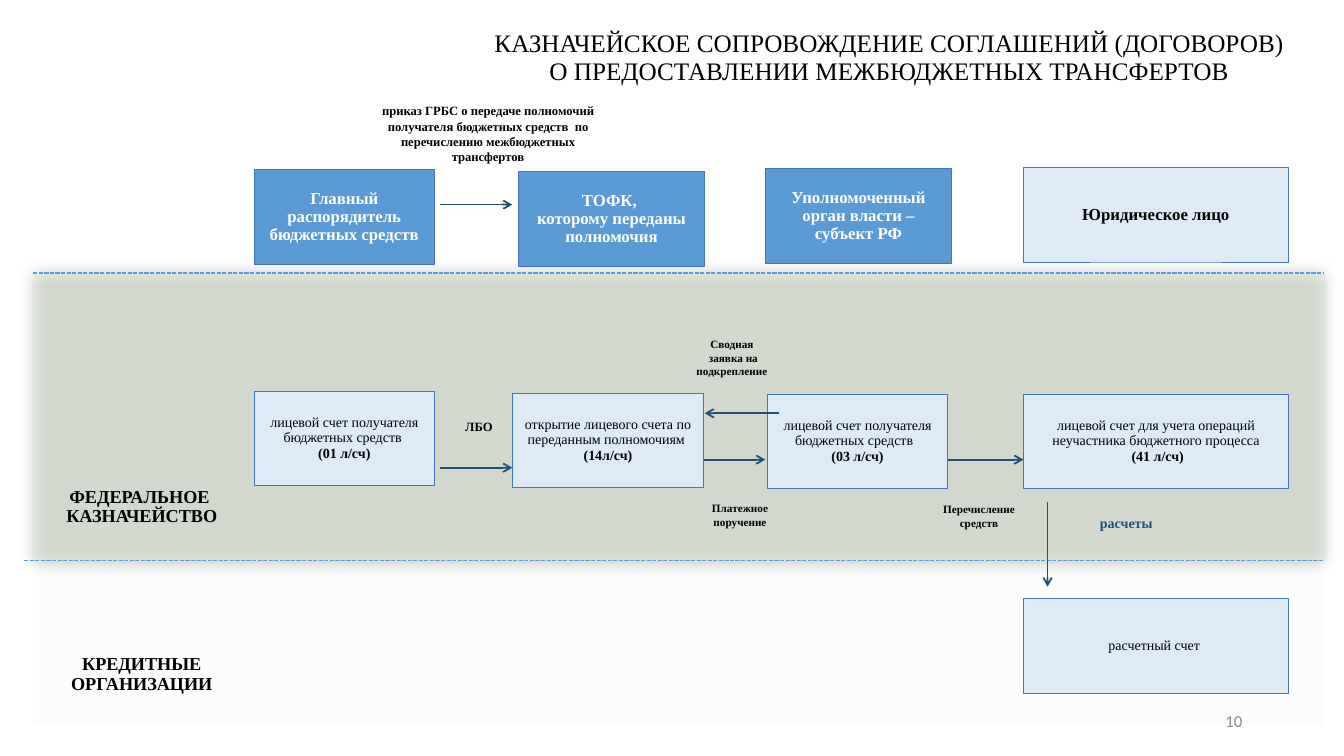
from lxml import etree
from pptx import Presentation
from pptx.dml.color import RGBColor
from pptx.enum.dml import MSO_LINE
from pptx.enum.shapes import MSO_CONNECTOR, MSO_SHAPE
from pptx.enum.text import MSO_ANCHOR, PP_ALIGN
from pptx.oxml.ns import qn
from pptx.util import Inches, Pt

RECTANGLE, STRAIGHT = MSO_SHAPE.RECTANGLE, MSO_CONNECTOR.STRAIGHT
CENTER, RIGHT = PP_ALIGN.CENTER, PP_ALIGN.RIGHT
TOP, MIDDLE = MSO_ANCHOR.TOP, MSO_ANCHOR.MIDDLE
DASH = MSO_LINE.SQUARE_DOT

BLACK = RGBColor(0x00, 0x00, 0x00)
WHITE = RGBColor(0xFF, 0xFF, 0xFF)
GRAY = RGBColor(0x8C, 0x8C, 0x8C)
BLUE = RGBColor(0x5B, 0x9B, 0xD5)
PALE_BLUE = RGBColor(0xDE, 0xEB, 0xF7)
BORDER = RGBColor(0x44, 0x72, 0xC4)
NAVY = RGBColor(0x1F, 0x4E, 0x79)
PALE_GREEN = RGBColor(0xE2, 0xF0, 0xD9)

SERIF = "Times New Roman"
# The layout grid has ten cells to the inch
COLUMNS, ROWS = 133.3, 75
BAND_LEFT, BAND_RIGHT = 3.3, 131.2
BOX_HEIGHT = 9.4
ENTITY_COLUMN, ENTITY_WIDTH = 101.5, 26.3
TREASURY_TOP, TREASURY_BOTTOM = 27.1, 55.6

# Participants: left, top, width, fill, font colour, paragraphs
PARTICIPANTS = [
    (25.2, 16.8, 17.9, BLUE, WHITE, ["Главный распорядитель бюджетных средств"]),
    (51.4, 17, 18.5, BLUE, WHITE, ["ТОФК, ", "которому переданы полномочия"]),
    (75.9, 16.7, 18.5, BLUE, WHITE,
     ["Уполномоченный", " орган власти – ", "субъект РФ"]),
    (ENTITY_COLUMN, 16.6, ENTITY_WIDTH, PALE_BLUE, BLACK, ["Юридическое лицо"]),
]

# Accounts: left, top, width, description, account number
ACCOUNTS = [
    (25.2, 38.8, 17.9, "лицевой счет получателя бюджетных средств ", "(01 л/сч)"),
    (50.8, 39, 19, "открытие лицевого счета по переданным полномочиям ", "(14л/сч)"),
    (76.1, 39.1, 17.9, "лицевой счет получателя бюджетных средств  ", "(03 л/сч)"),
    (ENTITY_COLUMN, 39.1, ENTITY_WIDTH,
     "лицевой счет для учета операций неучастника бюджетного процесса", " (41 л/сч)"),
    (ENTITY_COLUMN, 59.4, ENTITY_WIDTH, "расчетный счет ", None),
]

# Captions: left, top, width, height, size, colour, paragraphs
CAPTIONS = [
    (36.4, 9.7, 24, 7.1, 9, BLACK,
     ["приказ ГРБС о передаче полномочий получателя бюджетных средств  по "
      "перечислению межбюджетных трансфертов"]),
    (44.2, 39.7, 6.6, 5.2, 9, BLACK, ["ЛБО"]),
    (67.9, 32.7, 9.4, 5.6, 8, BLACK, ["Сводная", " заявка на подкрепление"]),
    (68.7, 48.3, 9.4, 5.6, 8, BLACK, ["Платежное поручение"]),
    (92.4, 48.4, 9.4, 5.6, 8, BLACK, ["Перечисление средств"]),
    (105, 50.4, 13.4, 2.9, 10, NAVY, ["расчеты"]),
]

# Arrows: start column, start row, end column, end row
ARROWS = [
    (43.6, 20.3, 50.8, 20.3),
    (43.6, 46.4, 50.8, 46.4),
    (69.8, 45.6, 75.9, 45.6),
    (77.3, 41, 69.9, 41),
    (94, 45.6, ENTITY_COLUMN, 45.6),
    (103.9, 49.8, 103.9, 58.2),
]


def cells(count):
    return Inches(count / 10)


def grid_area(left, top, width, height):
    return [cells(count) for count in (left, top, width, height)]


def write(shape, paragraphs, size, color=BLACK, font_name=SERIF, align=CENTER,
          anchor=MIDDLE, spacing=None, margin=None):
    """Fill a shape with paragraphs given as (text, bold) pairs."""
    frame = shape.text_frame
    frame.word_wrap = True
    frame.vertical_anchor = anchor
    if margin is not None:
        frame.margin_left = frame.margin_right = Inches(margin)
        frame.margin_top = frame.margin_bottom = Inches(margin)
    for index, (text, bold) in enumerate(paragraphs):
        paragraph = frame.add_paragraph() if index else frame.paragraphs[0]
        paragraph.alignment = align
        paragraph.line_spacing = spacing
        run = paragraph.add_run()
        run.text = text
        run.font.name = font_name
        run.font.size = Pt(size)
        run.font.bold = bold
        run.font.color.rgb = color


def add_text(slide, area, paragraphs, size, **style):
    shape = slide.shapes.add_textbox(*grid_area(*area))
    write(shape, paragraphs, size, **style)


def add_rectangle(slide, area, fill):
    shape = slide.shapes.add_shape(RECTANGLE, *grid_area(*area))
    shape.shadow.inherit = False
    shape.fill.solid()
    shape.fill.fore_color.rgb = fill
    return shape


def add_box(slide, left, top, width, fill, paragraphs, size, color=BLACK):
    box = add_rectangle(slide, (left, top, width, BOX_HEIGHT), fill)
    box.line.color.rgb = BORDER
    box.line.width = Pt(0.5)
    write(box, paragraphs, size, color=color, spacing=0.9, margin=0.01)


def add_alpha(color_element, percent):
    etree.SubElement(color_element, qn("a:alpha"), val=str(percent * 1000))


def add_band(slide, top, height, opacity, glow=False):
    band = add_rectangle(
        slide, (BAND_LEFT, top, BAND_RIGHT - BAND_LEFT, height), PALE_GREEN)
    band.line.fill.background()
    properties = band._element.spPr
    add_alpha(properties.find(qn("a:solidFill"))[0], opacity)
    if glow:
        # Soft shadow on all sides
        shadow = etree.SubElement(
            properties.find(qn("a:effectLst")), qn("a:outerShdw"),
            blurRad=str(Inches(0.14)), dist="0", algn="ctr", rotWithShape="0")
        add_alpha(etree.SubElement(shadow, qn("a:srgbClr"), val="000000"), 50)


def add_line(slide, ends, color, width, arrow=False, dash=None):
    line = slide.shapes.add_connector(STRAIGHT, *grid_area(*ends))
    line.line.color.rgb = color
    line.line.width = Pt(width)
    if dash is not None:
        line.line.dash_style = dash
    if arrow:
        etree.SubElement(line.line._get_or_add_ln(), qn("a:tailEnd"), type="arrow")
    etree.SubElement(line._element.spPr, qn("a:effectLst"))


def main():
    presentation = Presentation()
    presentation.slide_width = cells(COLUMNS)
    presentation.slide_height = cells(ROWS)
    slide = presentation.slides.add_slide(presentation.slide_layouts[6])

    # Background bands and their dashed borders
    add_band(slide, 56.2, 15.8, 12)
    add_band(slide, TREASURY_TOP, 28.6, 45, glow=True)
    for left, row in ((BAND_LEFT, TREASURY_TOP), (2.4, TREASURY_BOTTOM)):
        add_line(slide, (left, row, BAND_RIGHT, row), BLUE, 1, dash=DASH)

    # Title and page number
    title = ["КАЗНАЧЕЙСКОЕ СОПРОВОЖДЕНИЕ СОГЛАШЕНИЙ (ДОГОВОРОВ) ",
             "О ПРЕДОСТАВЛЕНИИ МЕЖБЮДЖЕТНЫХ ТРАНСФЕРТОВ "]
    add_text(slide, (46.5, 2.6, 84, 6.5), [(text, False) for text in title], 18,
             anchor=TOP, spacing=0.9)
    add_text(slide, (94.2, 69.5, 30, 4), [("10", False)], 12,
             color=GRAY, font_name="Calibri", align=RIGHT)

    # Band names
    for top, height, name in ((45.6, 9.4, "ФЕДЕРАЛЬНОЕ  КАЗНАЧЕЙСТВО"),
                              (61.6, 10.7, "КРЕДИТНЫЕ ОРГАНИЗАЦИИ")):
        add_text(slide, (BAND_LEFT, top, 21.5, height), [(name, True)], 13,
                 spacing=0.9, margin=0.01)

    # Participants and accounts
    for left, top, width, fill, color, texts in PARTICIPANTS:
        add_box(slide, left, top, width, fill, [(text, True) for text in texts], 12, color)
    for left, top, width, description, number in ACCOUNTS:
        paragraphs = [(description, False)]
        if number:
            paragraphs.append((number, True))
        add_box(slide, left, top, width, PALE_BLUE, paragraphs, 10)

    # Flows between the boxes
    for ends in ARROWS:
        add_line(slide, ends, NAVY, 1.25, arrow=True)
    for left, top, width, height, size, color, texts in CAPTIONS:
        add_text(slide, (left, top, width, height), [(text, True) for text in texts],
                 size, color=color)

    presentation.save("out.pptx")


if __name__ == "__main__":
    main()
